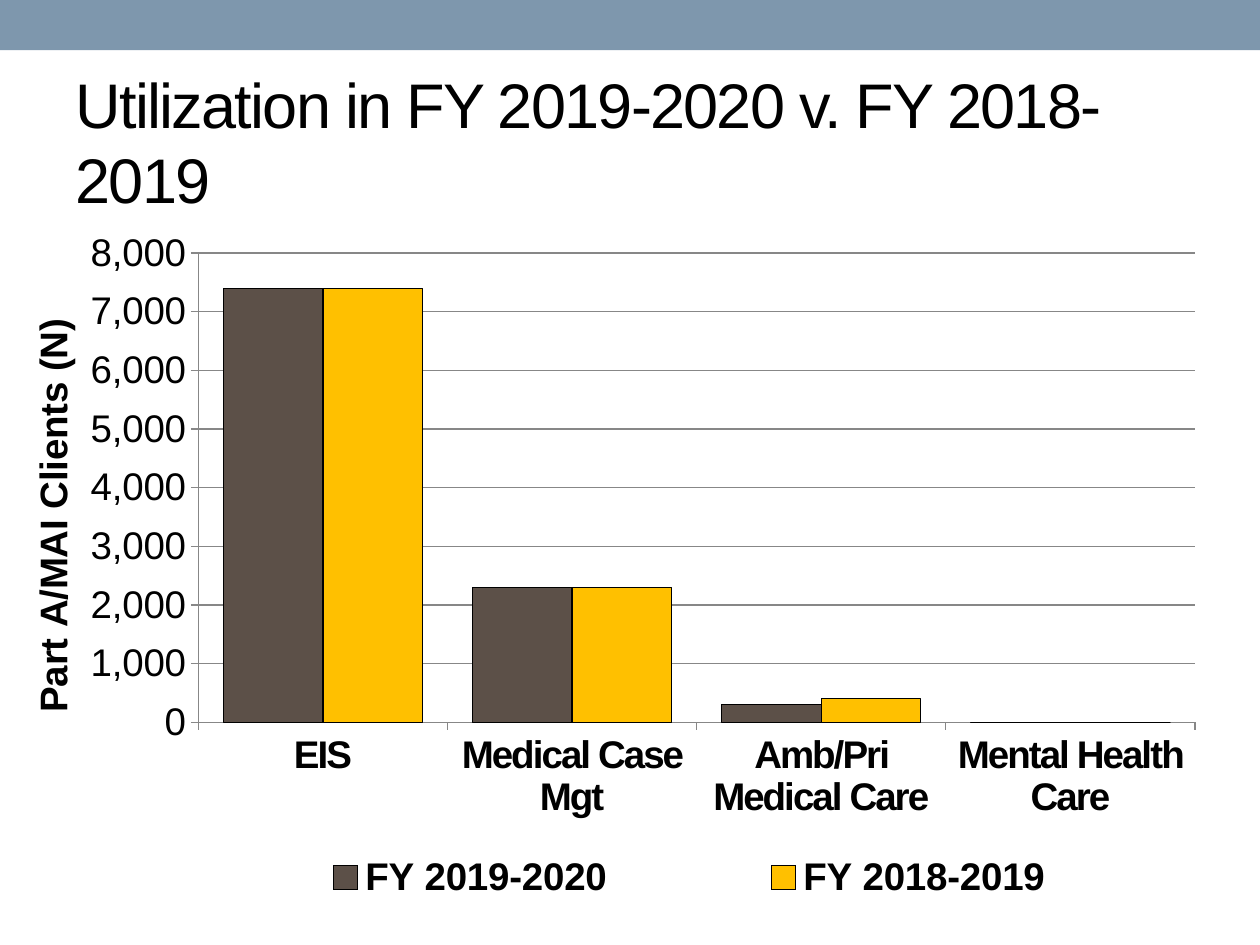
"""Build a slide comparing service use in two fiscal years."""
import pptx
import pptx.util
import pptx.chart.data
import pptx.dml.color
import pptx.enum.chart
import pptx.enum.shapes
import pptx.enum.text
import pptx.oxml
import pptx.oxml.ns

TITLE = "Utilization in FY 2019-2020 v. FY 2018-2019"
AXIS = "Part A/MAI Clients (N)"
CATS = ["EIS", "Medical Case Mgt", "Amb/Pri Medical Care", "Mental Health Care"]
ROWS = [
    ("FY 2019-2020", [7400, 2300, 300, 0], "brown"),
    ("FY 2018-2019", [7400, 2300, 400, 0], "gold"),
]
THEME = {
    "font": "Arial", "head": 36, "body": 22, "line": 0.75, "track": "-100",
    "ink": "000000", "band": "7E97AD", "grid": "878787",
    "brown": "5C5048", "gold": "FFC000",
}
SIZE = (10, 7.5)
SPOTS = {
    "band": (0, 0, 1, 0.053),
    "title": (0.05, 0.077, 0.9, 0.144),
    "chart": (0, 0.244, 0.96, 0.72),
}
PLOT = {"layoutTarget": "inner", "xMode": "edge", "yMode": "edge",
        "x": 0.164, "y": 0.033, "w": 0.824, "h": 0.69}
NAME = {"xMode": "edge", "yMode": "edge", "x": 0.018, "y": 0.12}
KEY = {"xMode": "edge", "yMode": "edge", "x": 0.15, "y": 0.906, "w": 0.84, "h": 0.09}


def apply(item, **values):
    for key, value in values.items():
        setattr(item, key, value)


def place(name):
    return [pptx.util.Inches(part * SIZE[i % 2]) for i, part in enumerate(SPOTS[name])]


def tint(name):
    return pptx.dml.color.RGBColor.from_string(THEME[name])


def style(font, size, bold=False):
    apply(font, name=THEME["font"], size=pptx.util.Pt(THEME[size]), bold=bold)
    font.color.rgb = tint("ink")


def fill(item, name):
    item.fill.solid()
    item.fill.fore_color.rgb = tint(name)


def stroke(line, name):
    line.color.rgb = tint(name)
    line.width = pptx.util.Pt(THEME["line"])


def settle(node, spot, values):
    for old in node.findall(pptx.oxml.ns.qn("c:layout")):
        node.remove(old)
    marks = "".join(f'<c:{key} val="{value}"/>' for key, value in values.items())
    space = pptx.oxml.ns.nsdecls("c")
    node.insert(spot, pptx.oxml.parse_xml(
        f"<c:layout {space}><c:manualLayout>{marks}</c:manualLayout></c:layout>"))


def draw_head(slide):
    band = slide.shapes.add_shape(pptx.enum.shapes.MSO_SHAPE.RECTANGLE, *place("band"))
    band.shadow.inherit = False
    fill(band, "band")
    band.line.fill.background()
    title = slide.shapes.title
    apply(title, **dict(zip(("left", "top", "width", "height"), place("title"))))
    frame = title.text_frame
    frame.text = TITLE
    apply(frame, word_wrap=True, vertical_anchor=pptx.enum.text.MSO_ANCHOR.MIDDLE,
          auto_size=pptx.enum.text.MSO_AUTO_SIZE.NONE)
    frame.paragraphs[0].alignment = pptx.enum.text.PP_ALIGN.LEFT
    font = frame.paragraphs[0].runs[0].font
    style(font, "head")
    font._element.set("spc", THEME["track"])


def draw_chart(slide):
    data = pptx.chart.data.CategoryChartData(number_format="#,##0")
    data.categories = CATS
    for name, vals, tone in ROWS:
        data.add_series(name, vals)
    kind = pptx.enum.chart.XL_CHART_TYPE.COLUMN_CLUSTERED
    chart = slide.shapes.add_chart(kind, *place("chart"), data).chart
    apply(chart, has_title=False, has_legend=True)
    style(chart.font, "body")
    plot = chart.plots[0]
    apply(plot, gap_width=50, overlap=0, vary_by_categories=False)
    for bar, (name, vals, tone) in zip(plot.series, ROWS):
        fill(bar.format, tone)
        stroke(bar.format.line, "ink")

    cat, val = chart.category_axis, chart.value_axis
    for axis in (cat, val):
        axis.major_tick_mark = pptx.enum.chart.XL_TICK_MARK.OUTSIDE
        stroke(axis.format.line, "grid")
        style(axis.tick_labels.font, "body", axis is cat)
    cat.tick_labels.font._element.set("spc", THEME["track"])
    apply(val, minimum_scale=0, maximum_scale=8000, major_unit=1000,
          has_major_gridlines=True, has_title=True)
    stroke(val.major_gridlines.format.line, "grid")
    apply(val.tick_labels, number_format="#,##0", number_format_is_linked=False)
    name = val.axis_title
    name.text_frame.text = AXIS
    style(name.text_frame.paragraphs[0].runs[0].font, "body", True)
    apply(chart.legend, include_in_layout=False,
          position=pptx.enum.chart.XL_LEGEND_POSITION.BOTTOM)
    style(chart.legend.font, "body", True)

    body = name._element.find(".//" + pptx.oxml.ns.qn("a:bodyPr"))
    for key, value in {"rot": "-5400000", "vert": "horz"}.items():
        body.set(key, value)
    area = chart._chartSpace.find(".//" + pptx.oxml.ns.qn("c:plotArea"))
    for node, spot, values in ((area, 0, PLOT), (name._element, 1, NAME),
                               (chart.legend._element, 1, KEY)):
        settle(node, spot, values)


def main():
    deck = pptx.Presentation()
    sides = [pptx.util.Inches(side) for side in SIZE]
    apply(deck, slide_width=sides[0], slide_height=sides[1])
    slide = deck.slides.add_slide(deck.slide_layouts[5])
    draw_head(slide)
    draw_chart(slide)
    deck.save("out.pptx")


if __name__ == "__main__":
    main()
